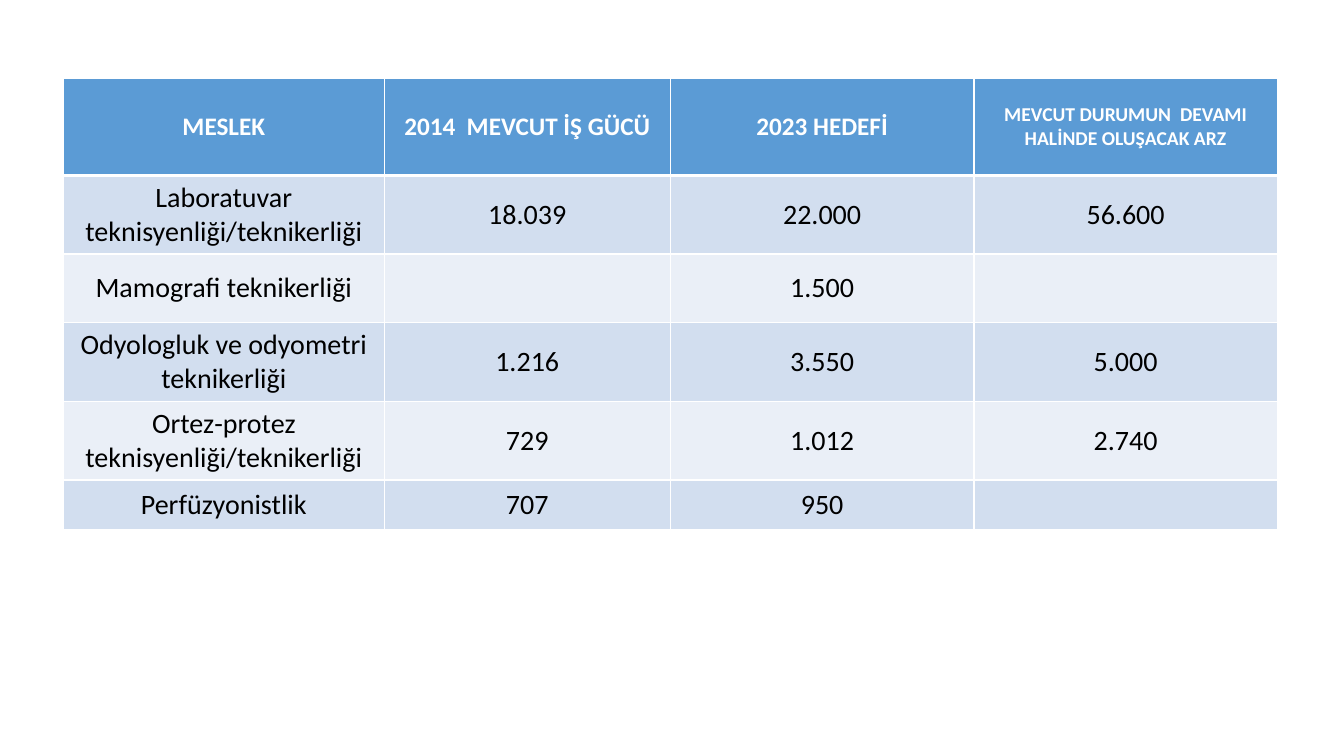
from lxml import etree
from pptx import Presentation
from pptx.dml.color import RGBColor
from pptx.enum import text
from pptx.oxml import ns
from pptx.util import Inches, Pt

WHITE = RGBColor(0xFF, 0xFF, 0xFF)
BLACK = RGBColor(0, 0, 0)
BLUE = RGBColor(0x5B, 0x9B, 0xD5)
BANDS = [RGBColor(0xD2, 0xDE, 0xEF), RGBColor(0xEA, 0xEF, 0xF7)]

WIDTHS = [3.18, 2.84, 3.01, 3.01]
HEIGHTS = [0.96, 0.78, 0.68, 0.78, 0.78, 0.49]
HEAD = ["MESLEK", "2014  MEVCUT İŞ GÜCÜ", "2023 HEDEFİ",
        "MEVCUT DURUMUN  DEVAMI HALİNDE OLUŞACAK ARZ"]
HEAD_SIZES = [18, 18, 18, 14]
JOBS = [
    ["Laboratuvar teknisyenliği/teknikerliği", "18.039", "22.000", "56.600"],
    ["Mamografi teknikerliği", "", "1.500", ""],
    ["Odyologluk ve odyometri teknikerliği", "1.216", "3.550", "5.000"],
    ["Ortez-protez teknisyenliği/teknikerliği", "729", "1.012", "2.740"],
    ["Perfüzyonistlik", "707", "950", ""],
]
CELL = {
    "vertical_anchor": text.MSO_ANCHOR.MIDDLE,
    "margin_left": Inches(0.13), "margin_right": Inches(0.13),
    "margin_top": Inches(0.05), "margin_bottom": Inches(0.05),
}


def apply(target, values):
    for name, value in values.items():
        setattr(target, name, value)


def add_borders(cell, widths):
    """Draw white borders; widths maps a side (L, R, T, B) to points."""
    props = cell._tc.get_or_add_tcPr()
    for side, width in widths.items():
        line = etree.SubElement(props, ns.qn(f"a:ln{side}"), w=str(Pt(width)))
        fill = etree.SubElement(line, ns.qn("a:solidFill"))
        etree.SubElement(fill, ns.qn("a:srgbClr"), val=str(WHITE))


def fill_cell(cell, words, back, font, borders):
    add_borders(cell, borders)
    apply(cell, CELL)
    cell.fill.solid()
    cell.fill.fore_color.rgb = back
    para = cell.text_frame.paragraphs[0]
    para.alignment = text.PP_ALIGN.CENTER
    if words:
        run = para.add_run()
        run.text = words
        apply(run.font, {"name": "Calibri", "size": Pt(font["size"]),
                         "bold": font["bold"]})
        run.font.color.rgb = font["color"]


def add_jobs(slide):
    frame = slide.shapes.add_table(
        len(HEIGHTS), len(WIDTHS), Inches(0.63), Inches(0.78),
        Inches(sum(WIDTHS)), Inches(sum(HEIGHTS)))
    table = frame.table
    for col, width in zip(table.columns, WIDTHS):
        col.width = Inches(width)
    for row, height in zip(table.rows, HEIGHTS):
        row.height = Inches(height)

    for c, (words, size) in enumerate(zip(HEAD, HEAD_SIZES)):
        fill_cell(table.cell(0, c), words, BLUE,
                  {"size": size, "bold": True, "color": WHITE},
                  {"L": 1, "R": 1, "T": 1, "B": 3})
    for r, job in enumerate(JOBS, 1):
        top = 3 if r == 1 else 1
        for c, words in enumerate(job):
            fill_cell(table.cell(r, c), words, BANDS[(r - 1) % 2],
                      {"size": 20, "bold": False, "color": BLACK},
                      {"L": 1, "R": 1, "T": top, "B": 1})


def main():
    deck = Presentation()
    apply(deck, {"slide_width": Inches(13.33), "slide_height": Inches(7.5)})
    add_jobs(deck.slides.add_slide(deck.slide_layouts[6]))
    deck.save("out.pptx")


if __name__ == "__main__":
    main()
